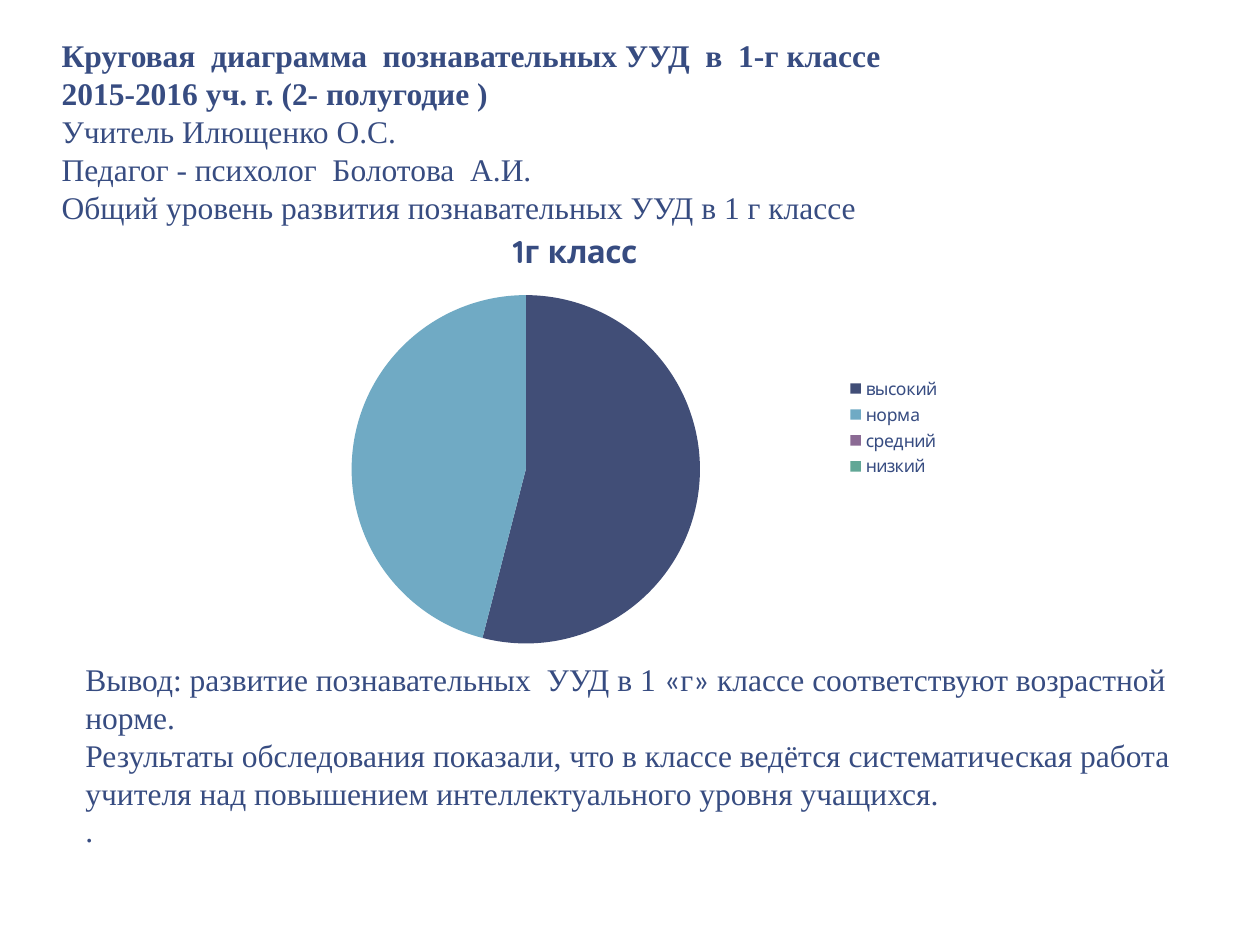
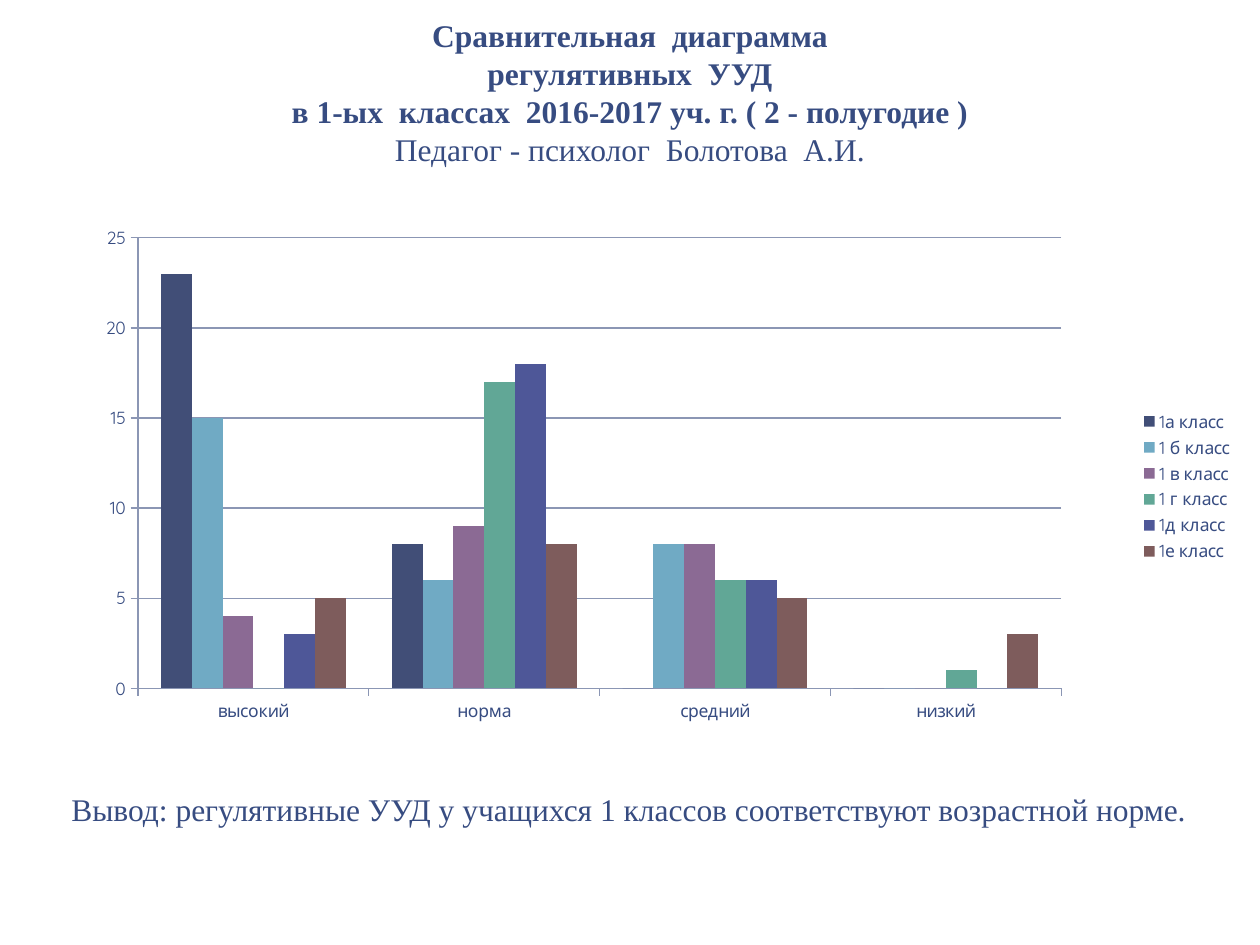
from itertools import groupby

from pptx import Presentation
from pptx import util as u
from pptx.chart.data import CategoryChartData
from pptx.dml.color import RGBColor
from pptx.enum import chart as charts, text
from pptx.oxml import parse_xml
from pptx.oxml.ns import nsdecls, qn

PX_PER_INCH = 126
INK = RGBColor(0x37, 0x4C, 0x81)
RULE = RGBColor(0x8B, 0x96, 0xB4)
PALETTE = [
    RGBColor(0x41, 0x4E, 0x77),
    RGBColor(0x70, 0xAA, 0xC4),
    RGBColor(0x8B, 0x6A, 0x94),
    RGBColor(0x61, 0xA7, 0x96),
    RGBColor(0x4E, 0x57, 0x98),
    RGBColor(0x7E, 0x5C, 0x5C),
]
BODY_FONT = "Times New Roman"
QUOTE_FONT = "Calibri"
CHART_FONT = "Quicksand"
TITLE_LAYOUT = 5
LEVELS = ["высокий", "норма", "средний", "низкий"]

PIE_TITLE = [
    "Круговая  диаграмма  познавательных УУД  в  1-г классе",
    "2015-2016 уч. г. (2- полугодие )",
    "Учитель Илющенко О.С.",
    "Педагог - психолог  Болотова  А.И.",
    "Общий уровень развития познавательных УУД в 1 г классе",
]
PIE_CONCLUSION = [
    "Вывод: развитие познавательных  УУД в 1 «г» классе соответствуют возрастной",
    "норме.",
    "Результаты обследования показали, что в классе ведётся систематическая работа",
    "учителя над повышением интеллектуального уровня учащихся.",
    ".",
]
PIE_SERIES = {"1г класс": [54, 46, 0, 0]}
COLUMN_TITLE = [
    "Сравнительная  диаграмма",
    "регулятивных  УУД",
    "в 1-ых  классах  2016-2017 уч. г. ( 2 - полугодие )",
    "Педагог - психолог  Болотова  А.И.",
]
COLUMN_CONCLUSION = [
    "Вывод: регулятивные УУД у учащихся 1 классов соответствуют возрастной норме.",
]
COLUMN_SERIES = {
    "1а класс": [23, 8, 0, 0],
    "1 б класс": [15, 6, 8, 0],
    "1 в класс": [4, 9, 8, 0],
    "1 г класс": [0, 17, 6, 1],
    "1д класс": [3, 18, 6, 0],
    "1е класс": [5, 8, 5, 3],
}


def px(length):
    """Turn whole pixels into EMU."""
    return u.Inches(length / PX_PER_INCH)


def write_lines(frame, lines, bold_count=0, align=text.PP_ALIGN.LEFT):
    """Write one paragraph per line, the first bold_count of them bold."""
    frame.word_wrap = True
    frame.auto_size = text.MSO_AUTO_SIZE.NONE
    frame.vertical_anchor = text.MSO_ANCHOR.TOP
    for index, line in enumerate(lines):
        para = frame.add_paragraph() if index else frame.paragraphs[0]
        para.alignment = align
        para.space_before = u.Pt(0)
        for is_quote, letters in groupby(line, key=lambda letter: letter in "«»"):
            span = para.add_run()
            span.text = "".join(letters)
            span.font.name = QUOTE_FONT if is_quote else BODY_FONT
            span.font.size = u.Pt(18)
            span.font.bold = index < bold_count
            span.font.color.rgb = INK


def add_title(page, box, lines, bold_count, align):
    """Place and fill the title placeholder."""
    title = page.shapes.title
    title.left, title.top, title.width, title.height = map(px, box)
    write_lines(title.text_frame, lines, bold_count, align)


def add_conclusion(page, box, lines):
    """Add the concluding text under the chart."""
    write_lines(page.shapes.add_textbox(*map(px, box)).text_frame, lines)


def set_plot_box(chart, plot_box):
    """Fix the inner plot area as fractions of the chart."""
    area = chart.element.find(qn("c:chart")).find(qn("c:plotArea"))
    for old in area.findall(qn("c:layout")):
        area.remove(old)
    places = "".join(
        f'<c:{name} val="{value}"/>' for name, value in zip("xywh", plot_box)
    )
    area.insert(0, parse_xml(
        f'<c:layout {nsdecls("c")}><c:manualLayout><c:layoutTarget val="inner"/>'
        f'<c:xMode val="edge"/><c:yMode val="edge"/>{places}'
        "</c:manualLayout></c:layout>"
    ))


def add_level_chart(page, box, kind, series, plot_box):
    """Add a chart of the levels with the shared font and legend."""
    data = CategoryChartData()
    data.categories = LEVELS
    for name, values in series.items():
        data.add_series(name, values)
    chart = page.shapes.add_chart(kind, *map(px, box), data).chart
    chart.font.name = CHART_FONT
    chart.font.size = u.Pt(10)
    chart.font.color.rgb = INK
    chart.has_title = False
    chart.has_legend = True
    chart.legend.position = charts.XL_LEGEND_POSITION.RIGHT
    chart.legend.include_in_layout = False
    set_plot_box(chart, plot_box)
    return chart


def paint(part, color):
    """Fill a slice or a series with a solid colour."""
    part.format.fill.solid()
    part.format.fill.fore_color.rgb = color


def add_pie(page, box):
    """Add the pie of one class with its heading."""
    chart = add_level_chart(
        page, box, charts.XL_CHART_TYPE.PIE, PIE_SERIES, (0.04, 0.2, 0.79, 0.79)
    )
    chart.has_title = True
    frame = chart.chart_title.text_frame
    frame.text = next(iter(PIE_SERIES))
    font = frame.paragraphs[0].runs[0].font
    font.name, font.size, font.bold = CHART_FONT, u.Pt(18), True
    font.color.rgb = INK
    chart.chart_title.include_in_layout = False
    plot = chart.plots[0]
    plot.vary_by_categories = True
    for index in range(len(LEVELS)):
        paint(plot.series[0].points[index], PALETTE[index])


def add_columns(page, box):
    """Add the clustered columns comparing the classes."""
    chart = add_level_chart(
        page, box, charts.XL_CHART_TYPE.COLUMN_CLUSTERED, COLUMN_SERIES,
        (0.1, 0.18, 0.75, 0.58),
    )
    plot = chart.plots[0]
    plot.vary_by_categories = False
    plot.gap_width = 150
    for series, color in zip(plot.series, PALETTE):
        paint(series, color)
    scale = chart.value_axis
    scale.minimum_scale, scale.maximum_scale, scale.major_unit = 0, 25, 5
    scale.has_major_gridlines = True
    for axis in (chart.category_axis, scale):
        axis.major_tick_mark = charts.XL_TICK_MARK.OUTSIDE
    for ruled in (chart.category_axis, scale, scale.major_gridlines):
        ruled.format.line.color.rgb = RULE
        ruled.format.line.width = u.Pt(0.75)


def build_pie_slide(page):
    """Build the slide about one class."""
    add_title(page, (49, 30, 1131, 201), PIE_TITLE, 2, text.PP_ALIGN.LEFT)
    add_pie(page, (197, 207, 756, 441))
    add_conclusion(page, (73, 654, 1180, 201), PIE_CONCLUSION)


def build_column_slide(page):
    """Build the slide comparing all classes."""
    add_title(page, (0, 10, 1260, 163), COLUMN_TITLE, 3, text.PP_ALIGN.CENTER)
    add_columns(page, (15, 98, 1231, 777))
    add_conclusion(page, (59, 784, 1162, 50), COLUMN_CONCLUSION)


def main():
    """Build and save the deck."""
    deck = Presentation()
    deck.slide_width, deck.slide_height = px(1260), px(945)
    for build in (build_pie_slide, build_column_slide):
        build(deck.slides.add_slide(deck.slide_layouts[TITLE_LAYOUT]))
    deck.save("out.pptx")


if __name__ == "__main__":
    main()
